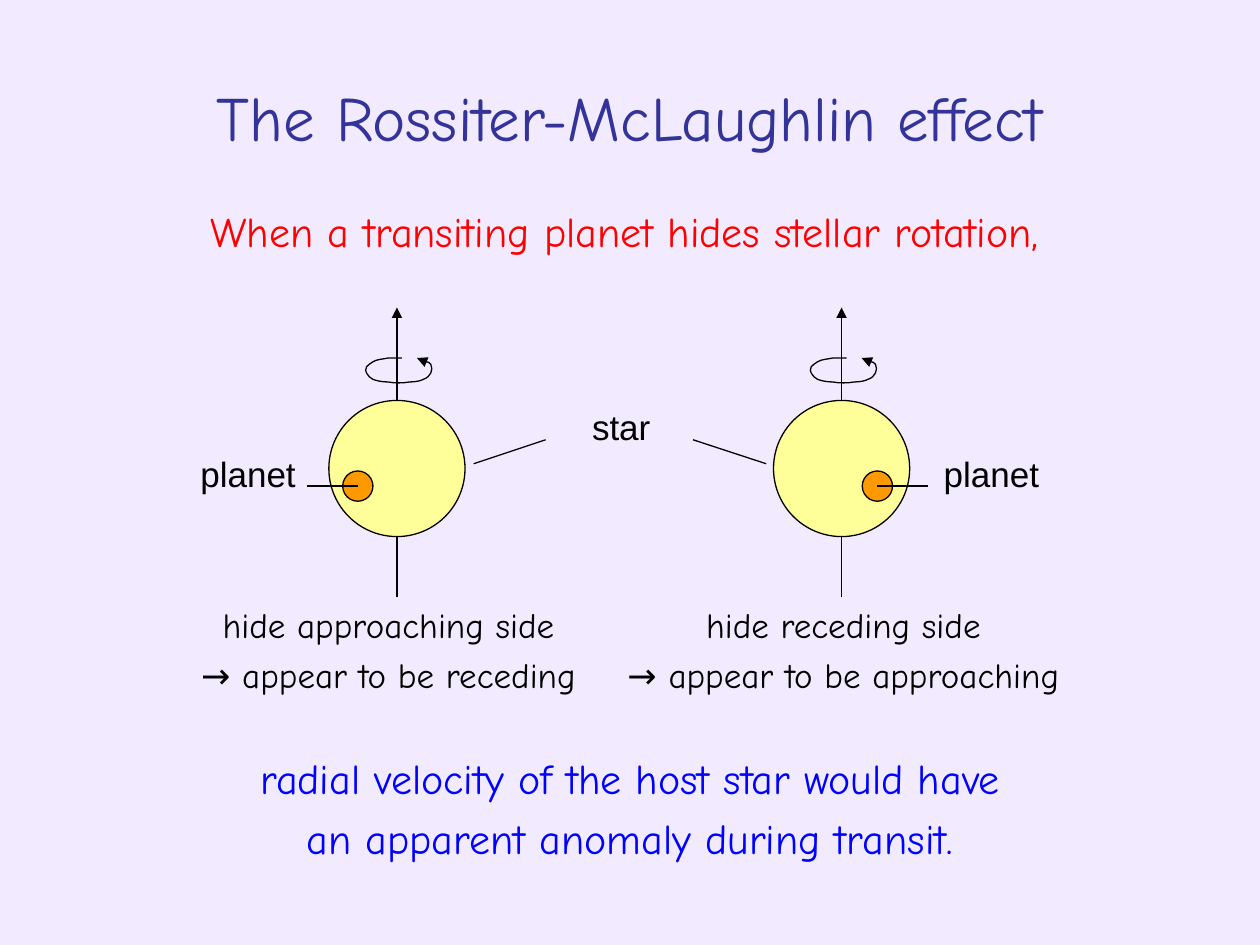
from lxml.etree import SubElement
from pptx import Presentation
from pptx.dml.color import RGBColor
from pptx.enum.shapes import MSO_CONNECTOR, MSO_SHAPE
from pptx.enum.text import MSO_ANCHOR, PP_ALIGN
from pptx.oxml.ns import qn
from pptx.util import Pt

COLORS = {"bg": "F2EBFF", "title": "333399", "red": "FF0000", "blue": "0000FF",
          "black": "000000", "star": "FFFF99", "planet": "FF9900"}
HAND, SANS = "Comic Neue", "Arial"

TITLE = ("The Rossiter-McLaughlin effect",)
TEXTS = [
    (["hide approaching side", "→ appear to be receding"], (90, 341.3, 264.2, 59.8), HAND, 20, "black"),
    (["hide receding side", "→ appear to be approaching"], (339.8, 341.3, 284.4, 59.8), HAND, 20, "black"),
    (["planet"], (102.2, 254.9, 79.2, 31), SANS, 20, "black"),
    (["planet"], (527, 254.9, 79.2, 31), SANS, 20, "black"),
    (["star"], (315.4, 228.2, 79.2, 31), SANS, 20, "black"),
    (["When a transiting planet hides stellar rotation,"], (77.8, 113.8, 558, 36), HAND, 24, "red"),
    (["radial velocity of the host star would have", "an apparent anomaly during transit."],
     (36, 426.2, 648, 70.6), HAND, 24, "blue"),
]

SYSTEMS = [
    {"axis": 226.8, "planet": -22.3, "label_line": -28.8, "star_line": (311.8, 270.7)},
    {"axis": 480.9, "planet": 20.5, "label_line": 28.8, "star_line": (396, 437.8)},
]
AXIS_TOP, AXIS_BOTTOM = 175.7, 341.3
STAR_Y, STAR_D = 267.7, 77.8
PLANET_Y, PLANET_D = 277.8, 17.3
STAR_LINE_Y = (251.3, 265)
LOOP_Y = 204.6
LOOP = [
    (2.9, 0),
    (0, 0), (-2.2, 0), (-5, 0),
    (-7.9, 0.7), (-11.5, 0.7), (-13.7, 2.2),
    (-15.1, 2.9), (-16.6, 4.3), (-17.3, 5),
    (-18, 6.5), (-18, 7.9), (-17.3, 8.6),
    (-16.6, 10.1), (-15.1, 11.5), (-13.7, 12.2),
    (-11.5, 13), (-8.6, 13.7), (-5, 13.7),
    (-1.4, 14.4), (3.6, 14.4), (7.2, 13.7),
    (10.8, 13.7), (13.7, 13), (15.1, 12.2),
    (17.3, 11.5), (18.7, 10.1), (19.4, 8.6),
    (20.2, 7.2), (20.2, 5), (19.4, 3.6),
    (18.7, 2.2), (16.6, 2.2), (15.1, 2.2),
    (13.7, 1.4), (12.2, 0.7), (11.5, 0),
]


def rgb(name):
    return RGBColor.from_string(COLORS[name])


def add_text(s, lines, box, font, size, color, anchor=MSO_ANCHOR.TOP):
    tf = s.shapes.add_textbox(*map(Pt, box)).text_frame
    tf.word_wrap = True
    tf.vertical_anchor = anchor
    for i, line in enumerate(lines):
        p = tf.add_paragraph() if i else tf.paragraphs[0]
        p.alignment = PP_ALIGN.CENTER
        p.space_before = Pt(round(size * 0.23, 1) if i else 0)
        r = p.add_run()
        r.text = line
        r.font.name, r.font.size = font, Pt(size)
        r.font.color.rgb = rgb(color)


def style_line(sp, arrow=False):
    sp.line.color.rgb = rgb("black")
    sp.line.width = Pt(0.75)
    if arrow:
        SubElement(sp.line._get_or_add_ln(), qn("a:tailEnd"), type="triangle")


def add_line(s, x1, y1, x2, y2, arrow=False):
    sp = s.shapes.add_connector(MSO_CONNECTOR.STRAIGHT, *map(Pt, (x1, y1, x2, y2)))
    style_line(sp, arrow)
    SubElement(sp._element.spPr, qn("a:effectLst"))


def add_disc(s, x, y, d, color):
    sp = s.shapes.add_shape(MSO_SHAPE.OVAL, *map(Pt, (x - d / 2, y - d / 2, d, d)))
    sp.shadow.inherit = False
    sp.fill.solid()
    sp.fill.fore_color.rgb = rgb(color)
    style_line(sp)


def add_loop(s, axis):
    points = [(Pt(axis + x), Pt(LOOP_Y + y)) for x, y in LOOP]
    builder = s.shapes.build_freeform(*points[0])
    builder.add_line_segments(points[1:], close=False)
    sp = builder.convert_to_shape()
    sp.shadow.inherit = False
    sp.fill.background()
    style_line(sp, arrow=True)
    steps = list(sp._element.iter(qn("a:lnTo")))
    for i in range(0, len(steps), 3):
        outline = steps[i].getparent()
        curve = SubElement(outline, qn("a:cubicBezTo"))
        for step in steps[i:i + 3]:
            curve.append(step[0])
            outline.remove(step)


def main():
    prs = Presentation()
    prs.slide_width, prs.slide_height = Pt(720), Pt(540)
    s = prs.slides.add_slide(prs.slide_layouts[6])
    s.background.fill.solid()
    s.background.fill.fore_color.rgb = rgb("bg")

    add_text(s, TITLE, (36, 21.6, 648, 90), HAND, 36, "title", MSO_ANCHOR.MIDDLE)
    for system in SYSTEMS:
        axis = system["axis"]
        planet_x = axis + system["planet"]
        add_line(s, axis, AXIS_BOTTOM, axis, AXIS_TOP, arrow=True)
        add_disc(s, axis, STAR_Y, STAR_D, "star")
        add_disc(s, planet_x, PLANET_Y, PLANET_D, "planet")
        add_loop(s, axis)
        near, far = system["star_line"]
        add_line(s, near, STAR_LINE_Y[0], far, STAR_LINE_Y[1])
        add_line(s, planet_x, PLANET_Y, planet_x + system["label_line"], PLANET_Y)
    for text in TEXTS:
        add_text(s, *text)
    prs.save("out.pptx")


if __name__ == "__main__":
    main()
